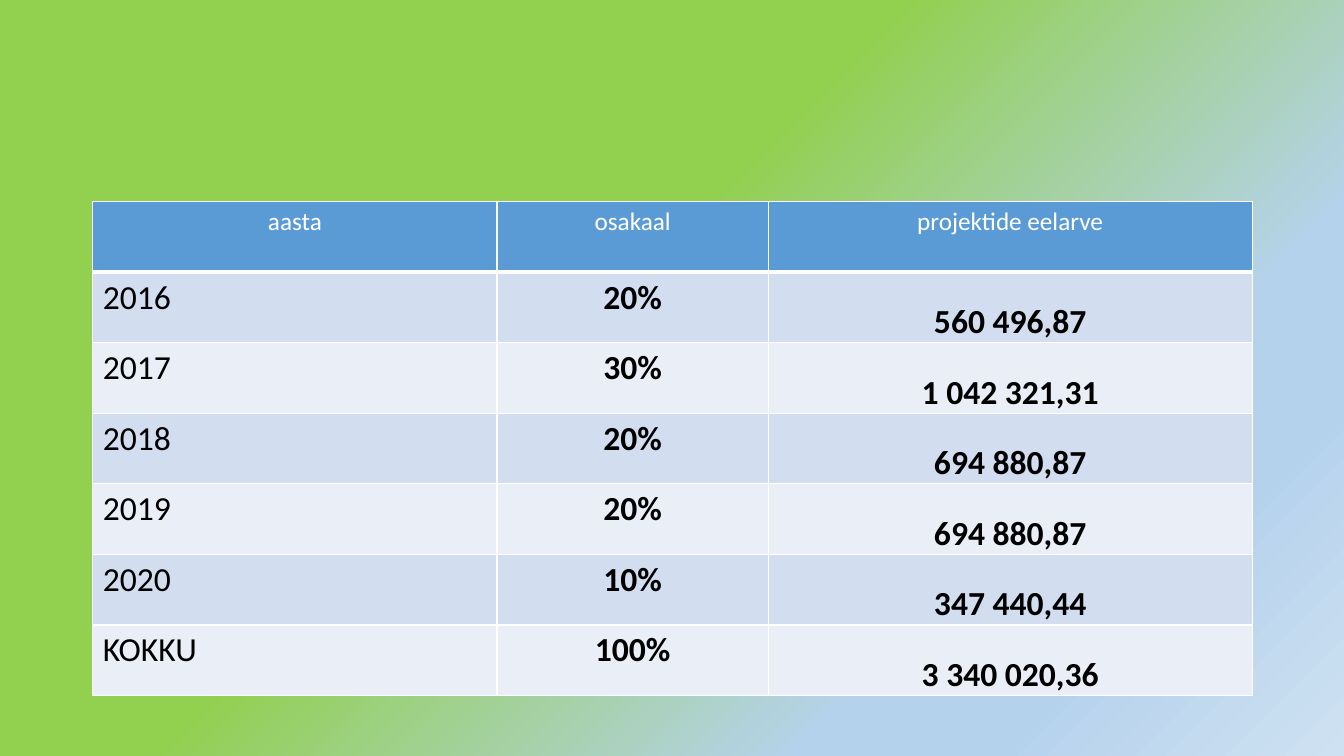
"""Build a slide with a table of project budgets by year."""
from lxml import etree
from pptx import Presentation
from pptx import util as u
from pptx.dml.color import RGBColor
from pptx.enum import text
from pptx.oxml.ns import qn

HUES = {"head": "5B9BD5", "odd": "D2DEEF", "even": "EAEFF7", "white": "FFFFFF",
        "black": "000000", "green": "92D050", "sky": "B5D2EC", "pale": "CEE1F2"}
STOPS = [(43, "green"), (74, "sky"), (83, "sky"), (100, "pale")]
ROWS = [("aasta", "osakaal", "projektide eelarve"),
        ("2016", "20%", "560 496,87"),
        ("2017", "30%", "1 042 321,31"),
        ("2018", "20%", "694 880,87"),
        ("2019", "20%", "694 880,87"),
        ("2020", "10%", "347 440,44"),
        ("KOKKU", "100%", "3 340 020,36")]
COLS = [4.01, 2.69, 4.8]
HIGH = 0.7


def paint(node, hue):
    etree.SubElement(node, qn("a:srgbClr"), val=HUES[hue])


def edge(cell, side, width):
    props = cell._tc.get_or_add_tcPr()
    line = etree.SubElement(props, qn("a:ln" + side), w=str(u.Pt(width)))
    paint(etree.SubElement(line, qn("a:solidFill")), "white")


deck = Presentation()
deck.slide_width, deck.slide_height = u.Inches(13.33), u.Inches(7.5)
slide = deck.slides.add_slide(deck.slide_layouts[6])

slide.background.fill.gradient()
grad = slide.element.xpath(".//a:gradFill")[0]
for node in list(grad):
    grad.remove(node)
stops = etree.SubElement(grad, qn("a:gsLst"))
for place, hue in STOPS:
    paint(etree.SubElement(stops, qn("a:gs"), pos=str(place * 1000)), hue)
shade = etree.SubElement(grad, qn("a:path"), {"path": "circle"})
etree.SubElement(shade, qn("a:fillToRect"), r="100000", b="100000")

frame = slide.shapes.add_table(len(ROWS), len(COLS), u.Inches(0.92), u.Inches(2),
                               u.Inches(sum(COLS)), u.Inches(HIGH * len(ROWS)))
table = frame.table
for col, width in zip(table.columns, COLS):
    col.width = u.Inches(width)

for r, row in enumerate(ROWS):
    table.rows[r].height = u.Inches(HIGH)
    band = "head" if r == 0 else "odd" if r % 2 else "even"
    for c, words in enumerate(row):
        cell = table.cell(r, c)
        for side in "LRTB":
            thick = (r, side) in [(0, "B"), (1, "T")]
            edge(cell, side, 3 if thick else 1)
        cell.fill.solid()
        cell.fill.fore_color.rgb = RGBColor.from_string(HUES[band])
        if r and c == 2:
            cell.vertical_anchor = text.MSO_ANCHOR.BOTTOM
            cell.margin_left = cell.margin_right = 0
            cell.margin_top = cell.margin_bottom = 0
        cell.text_frame.text = words
        para = cell.text_frame.paragraphs[0]
        if r == 0 or c:
            para.alignment = text.PP_ALIGN.CENTER
        font = para.runs[0].font
        font.name = "Calibri"
        font.size = u.Pt(24 if r else 18)
        font.bold = r > 0 and c > 0
        font.color.rgb = RGBColor.from_string(HUES["black" if r else "white"])

deck.save("out.pptx")
